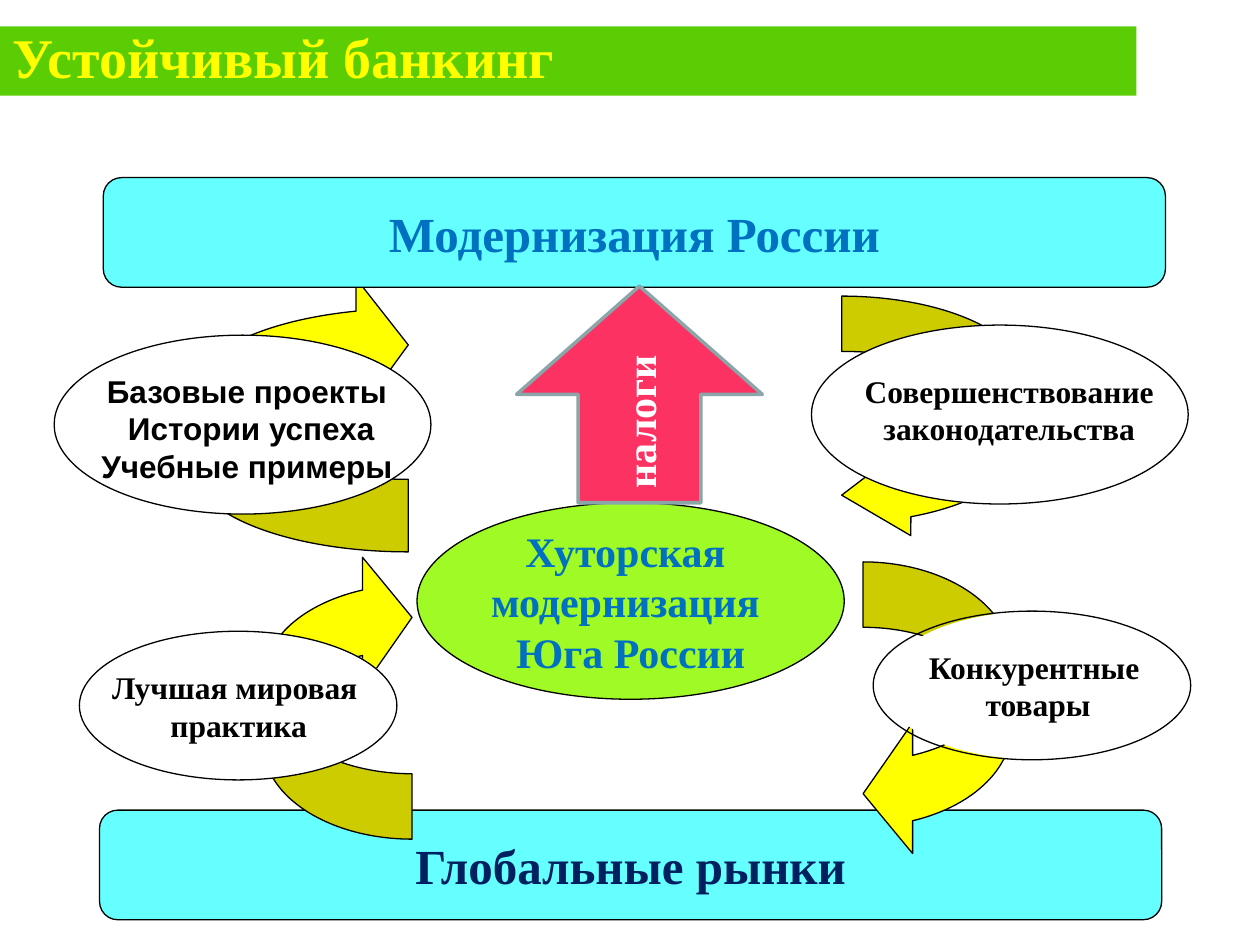
from dataclasses import dataclass
from typing import Optional

from pptx import Presentation
from pptx.dml.color import RGBColor
from pptx.enum import shapes, text
from pptx.util import Inches, Pt

BLACK = RGBColor(0x00, 0x00, 0x00)
WHITE = RGBColor(0xFF, 0xFF, 0xFF)
YELLOW = RGBColor(0xFF, 0xFF, 0x00)
GREEN = RGBColor(0x5B, 0xCD, 0x05)
LIME = RGBColor(0x9F, 0xFA, 0x26)
CYAN = RGBColor(0x66, 0xFF, 0xFF)
BLUE = RGBColor(0x00, 0x70, 0xC0)
NAVY = RGBColor(0x00, 0x20, 0x60)
RED = RGBColor(0xFC, 0x32, 0x62)
GREY = RGBColor(0x8A, 0xA6, 0xA8)

SERIF = "Times New Roman"
KIND = shapes.MSO_SHAPE
Box = tuple[float, float, float, float]


@dataclass(frozen=True)
class Label:
    """Bold text; each entry of lines is one paragraph."""
    lines: tuple[str, ...]
    size: float = 18
    color: RGBColor = BLACK
    font: str = SERIF
    align: text.PP_ALIGN = text.PP_ALIGN.CENTER
    wrap: bool = False


@dataclass(frozen=True)
class Figure:
    kind: KIND
    box: Box
    fill: Optional[RGBColor] = None
    line: Optional[RGBColor] = BLACK
    line_width: float = 0.75
    adjustments: tuple[float, ...] = ()
    rotation: float = 0
    label: Optional[Label] = None
    vertical: bool = False


@dataclass(frozen=True)
class Caption:
    box: Box
    label: Label


def oval(box: Box, fill=None, line=BLACK, label=None) -> Figure:
    return Figure(KIND.OVAL, box, fill, line, label=label)


def cycle_arrow(box: Box, adjustments: tuple[float, ...], rotation: float = 0) -> Figure:
    return Figure(KIND.CURVED_LEFT_ARROW, box, YELLOW,
                  adjustments=adjustments, rotation=rotation)


def banner(left: float, top: float, words: str, color: RGBColor) -> Figure:
    return Figure(KIND.ROUNDED_RECTANGLE, (left, top, 8.43, 0.87), CYAN,
                  adjustments=(0.167,), label=Label((words,), 28, color))


LOWER_ARROW = (0.44, 0.881, 0.333)

ELEMENTS = (
    Figure(KIND.RECTANGLE, (0, 0.21, 9.02, 0.55), GREEN, None),
    cycle_arrow((1.52, 2.19, 1.72, 2.19), (0.335, 0.881, 0.241), 180),
    oval((0.43, 2.66, 2.99, 1.42), WHITE),
    cycle_arrow((6.68, 2.35, 1.48, 1.95), (0.297, 0.5, 0.371)),
    oval((6.44, 2.58, 2.99, 1.42), WHITE),
    Caption((-0.27, 2.9, 4.46, 1),
            Label(("Базовые проекты", " Истории успеха", "Учебные примеры"),
                  font="Arial", wrap=True)),
    banner(0.82, 1.41, "Модернизация России", BLUE),
    banner(0.79, 6.43, "Глобальные рынки", NAVY),
    oval((3.31, 3.99, 3.39, 1.56), LIME,
         label=Label(("Хуторская ", "модернизация \nЮга России"), 24, BLUE)),
    cycle_arrow((6.85, 4.46, 1.18, 2.36), LOWER_ARROW),
    oval((7.01, 4.85, 2.46, 1.18), WHITE, None, Label(("Конкурентные \nтовары",))),
    cycle_arrow((2.09, 4.38, 1.18, 2.28), LOWER_ARROW, 180),
    oval((0.63, 5.01, 2.53, 1.18), WHITE, None, Label(("Лучшая мировая \nпрактика",))),
    Caption((6.29, 2.9, 3.44, 0.71),
            Label(("Совершенствование законодательства",), wrap=True)),
    Figure(KIND.UP_ARROW, (4.1, 2.27, 1.95, 1.72), RED, GREY, 2,
           label=Label(("налоги",), 24, WHITE, wrap=True), vertical=True),
    oval((0.63, 5.01, 2.52, 1.18)),
    oval((6.93, 4.85, 2.52, 1.18)),
)


def write_label(frame, label: Label) -> None:
    frame.word_wrap = label.wrap
    font_format = {"size": Pt(label.size), "name": label.font, "bold": True}
    for index, line in enumerate(label.lines):
        paragraph = frame.add_paragraph() if index else frame.paragraphs[0]
        paragraph.alignment = label.align
        for part_index, part in enumerate(line.split("\n")):
            if part_index:
                paragraph.add_line_break()
            run = paragraph.add_run()
            run.text = part
            for name, value in font_format.items():
                setattr(run.font, name, value)
            run.font.color.rgb = label.color


def draw_figure(slide, figure: Figure) -> None:
    shape = slide.shapes.add_shape(figure.kind, *map(Inches, figure.box))
    shape.shadow.inherit = False
    shape.rotation = figure.rotation
    for index, value in enumerate(figure.adjustments):
        shape.adjustments[index] = value
    for part, color in ((shape.fill, figure.fill), (shape.line.fill, figure.line)):
        if color is None:
            part.background()
        else:
            part.solid()
            part.fore_color.rgb = color
    if figure.line is not None:
        shape.line.width = Pt(figure.line_width)
    if figure.label:
        frame = shape.text_frame
        frame.vertical_anchor = text.MSO_ANCHOR.MIDDLE
        write_label(frame, figure.label)
        if figure.vertical:
            shape.element.txBody.bodyPr.set("vert", "vert270")


def draw_caption(slide, caption: Caption) -> None:
    box = slide.shapes.add_textbox(*map(Inches, caption.box))
    write_label(box.text_frame, caption.label)


def place_title(slide, box: Box, label: Label) -> None:
    """Fill the title placeholder and bring it in front of the green bar."""
    title = slide.shapes.title
    for name, value in zip(("left", "top", "width", "height"), box):
        setattr(title, name, Inches(value))
    frame = title.text_frame
    frame.auto_size = text.MSO_AUTO_SIZE.NONE
    frame.vertical_anchor = text.MSO_ANCHOR.MIDDLE
    write_label(frame, label)
    title.element.getparent().append(title.element)


def main() -> None:
    presentation = Presentation()
    presentation.slide_width, presentation.slide_height = Inches(10), Inches(7.5)
    slide = presentation.slides.add_slide(presentation.slide_layouts[5])
    for element in ELEMENTS:
        if isinstance(element, Caption):
            draw_caption(slide, element)
        else:
            draw_figure(slide, element)
    place_title(slide, (0, 0.21, 8.05, 0.47),
                Label(("Устойчивый банкинг",), 32, YELLOW,
                      align=text.PP_ALIGN.LEFT, wrap=True))
    presentation.save("out.pptx")


if __name__ == "__main__":
    main()
